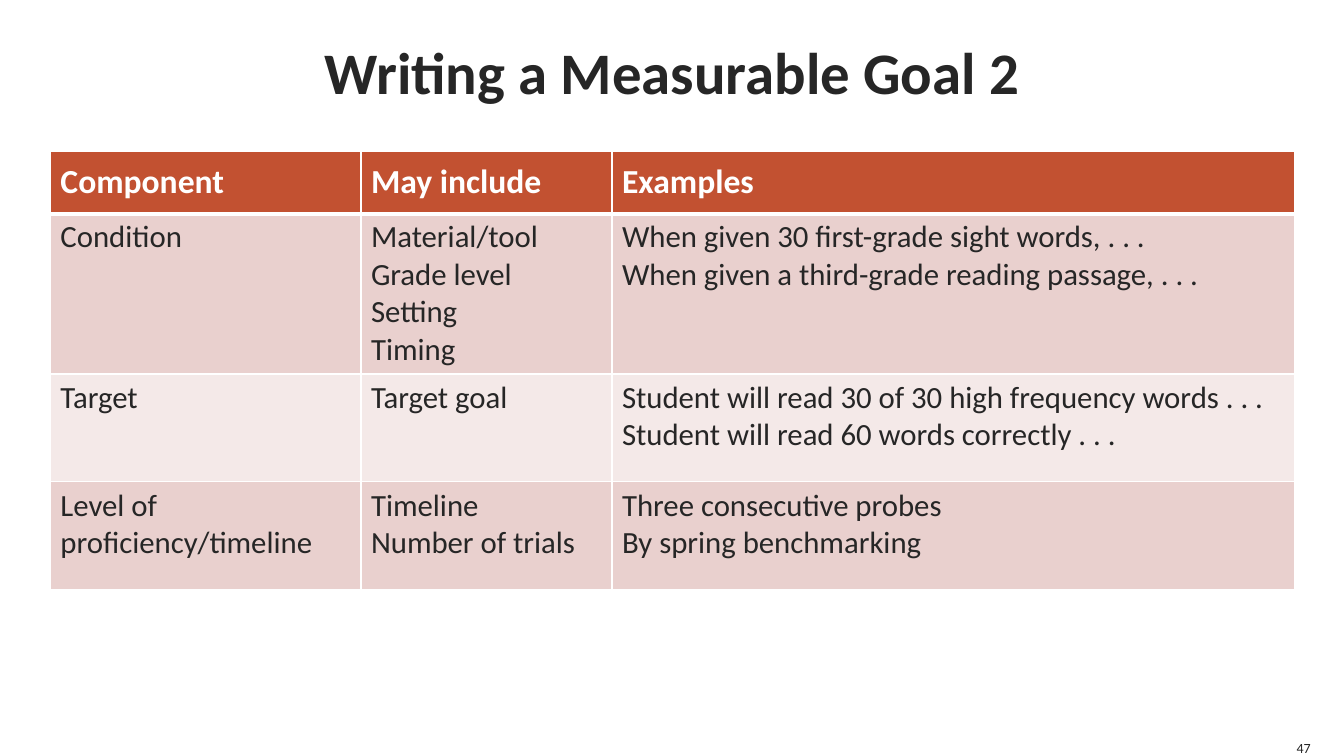
from pptx import Presentation
from pptx.dml.color import RGBColor
from pptx.enum.text import MSO_ANCHOR as Anchor, MSO_AUTO_SIZE as AutoSize, PP_ALIGN as Align
from pptx.oxml.ns import qn
from pptx.util import Inches, Pt
from lxml.etree import SubElement

INK = RGBColor(0x26, 0x26, 0x26)
WHITE = RGBColor(0xFF, 0xFF, 0xFF)
RUST = RGBColor(0xC2, 0x51, 0x31)
ROSE = RGBColor(0xE9, 0xD0, 0xCE)
BLUSH = RGBColor(0xF4, 0xE9, 0xE8)

COLUMN_WIDTHS = (3.08, 2.49, 6.77)
ROW_HEIGHTS = (0.62, 1.59, 1.07, 1.07)
GOAL_ROWS = (
    (["Component"], ["May include"], ["Examples"]),
    (["Condition"],
     ["Material/tool", "Grade level", "Setting", "Timing"],
     ["When given 30 first-grade sight words, . . .",
      "When given a third-grade reading passage, . . ."]),
    (["Target"],
     ["Target goal"],
     ["Student will read 30 of 30 high frequency words . . .",
      "Student will read 60 words correctly . . ."]),
    (["Level of proficiency/timeline"],
     ["Timeline", "Number of trials"],
     ["Three consecutive probes", "By spring benchmarking"]),
)


class GoalSlide:
    """Hold the font and current slide, and add each kind of element to it."""

    def __init__(self, presentation, font="Calibri"):
        self.width = presentation.slide_width
        self.height = presentation.slide_height
        self.font = font
        self.slide = presentation.slides.add_slide(presentation.slide_layouts[5])

    def box(self, left, top, width, height):
        return (round(left * self.width), round(top * self.height),
                round(width * self.width), round(height * self.height))

    def add_lines(self, frame, lines, size, color, bold=False, align=Align.LEFT):
        for index, line in enumerate(lines):
            paragraph = frame.add_paragraph() if index else frame.paragraphs[0]
            paragraph.alignment = align
            run = paragraph.add_run()
            run.text = line
            run.font.name = self.font
            run.font.size = Pt(size)
            run.font.bold = bold
            run.font.color.rgb = color

    def frame(self, shape, anchor, wrap=True, auto_size=AutoSize.NONE):
        frame = shape.text_frame
        frame.margin_left = frame.margin_right = frame.margin_top = frame.margin_bottom = 0
        frame.vertical_anchor = anchor
        frame.word_wrap = wrap
        frame.auto_size = auto_size
        return frame

    def title(self, text, left, top, width, height):
        shape = self.slide.shapes.title
        shape.left, shape.top, shape.width, shape.height = self.box(left, top, width, height)
        self.add_lines(self.frame(shape, Anchor.MIDDLE), [text], 42, INK, True, Align.CENTER)

    def number(self, text, left, top, width, height):
        shape = self.slide.shapes.add_textbox(*self.box(left, top, width, height))
        frame = self.frame(shape, Anchor.BOTTOM, False, AutoSize.SHAPE_TO_FIT_TEXT)
        self.add_lines(frame, [text], 10, INK, align=Align.RIGHT)

    def borders(self, cell, **widths):
        properties = cell._tc.get_or_add_tcPr()
        for side in "LRTB":
            line = SubElement(properties, qn(f"a:ln{side}"), w=str(Pt(widths.get(side, 1))))
            SubElement(SubElement(line, qn("a:solidFill")), qn("a:srgbClr"), val=str(WHITE))

    def table(self, rows, left, top, width, height):
        table = self.slide.shapes.add_table(
            len(rows), len(COLUMN_WIDTHS), *self.box(left, top, width, height)).table
        for column, column_width in zip(table.columns, COLUMN_WIDTHS):
            column.width = Inches(column_width)
        for row, row_height in zip(table.rows, ROW_HEIGHTS):
            row.height = Inches(row_height)
        for row_index, row in enumerate(rows):
            header = row_index == 0
            for column_index, lines in enumerate(row):
                cell = table.cell(row_index, column_index)
                self.borders(cell, T=3 if row_index == 1 else 1, B=3 if header else 1)
                cell.fill.solid()
                cell.fill.fore_color.rgb = RUST if header else (BLUSH, ROSE)[row_index % 2]
                cell.vertical_anchor = Anchor.MIDDLE if header else Anchor.TOP
                self.add_lines(cell.text_frame, lines, 24 if header else 22,
                               WHITE if header else INK, header)


def main():
    presentation = Presentation()
    presentation.slide_width, presentation.slide_height = Inches(13.33), Inches(7.5)
    goal = GoalSlide(presentation)
    margin = 0.5 / 13.33
    goal.title("Writing a Measurable Goal 2", margin, 0, 1 - 2 * margin, 1.4 / 7.5)
    goal.table(GOAL_ROWS, margin, 0.2, 1 - 2 * margin, sum(ROW_HEIGHTS) / 7.5)
    goal.number("47", 12.83 / 13.33, 7.33 / 7.5, 0.17 / 13.33, 0.17 / 7.5)
    presentation.save("out.pptx")


if __name__ == "__main__":
    main()
